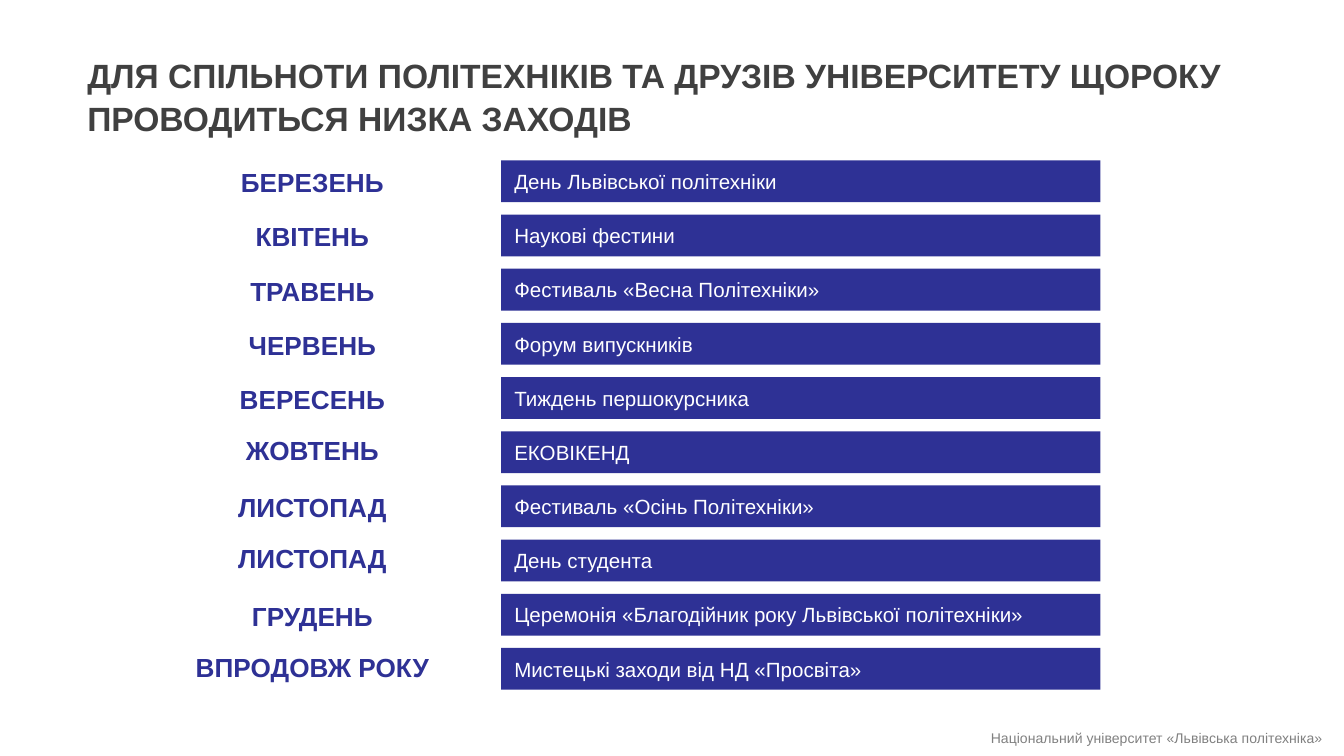
from pptx import Presentation
from pptx.dml.color import RGBColor
from pptx.enum.shapes import MSO_SHAPE
from pptx.enum.text import MSO_ANCHOR, MSO_AUTO_SIZE, PP_ALIGN
from pptx.util import Cm, Pt

RECTANGLE = MSO_SHAPE.RECTANGLE
TOP, MIDDLE = MSO_ANCHOR.TOP, MSO_ANCHOR.MIDDLE
LEFT, CENTER, RIGHT = PP_ALIGN.LEFT, PP_ALIGN.CENTER, PP_ALIGN.RIGHT
GROW = MSO_AUTO_SIZE.SHAPE_TO_FIT_TEXT

COLORS = {"blue": "2E3195", "white": "FFFFFF", "dark": "404040", "gray": "808080"}

presentation = Presentation()
presentation.slide_width = Cm(25.4)
presentation.slide_height = Cm(14.28)
slide = presentation.slides.add_slide(presentation.slide_layouts[6])


def write_text(text, shape, size, color, bold=False, align=LEFT, anchor=TOP,
               spacing=1.0, compact=True):
    frame = shape.text_frame
    frame.word_wrap = True
    frame.vertical_anchor = anchor
    if compact:
        frame.auto_size = GROW
        frame.margin_left = frame.margin_right = Cm(0.1)
        frame.margin_top = frame.margin_bottom = Cm(0.05)
    paragraph = frame.paragraphs[0]
    paragraph.alignment = align
    paragraph.line_spacing = spacing
    run = paragraph.add_run()
    run.text = text
    run.font.name = "Arial"
    run.font.size = Pt(size)
    run.font.bold = bold
    run.font.color.rgb = RGBColor.from_string(COLORS[color])
    return run


footer = slide.shapes.add_textbox(Cm(16.48), Cm(13.67), Cm(8.61), Cm(0.48))
footer_run = write_text("Національний університет «Львівська політехніка»", footer,
                        size=13, color="gray", align=RIGHT)
footer_run.font._element.set("baseline", "30000")

title = slide.shapes.add_textbox(Cm(1.55), Cm(0.94), Cm(23.57), Cm(1.63))
write_text("ДЛЯ СПІЛЬНОТИ ПОЛІТЕХНІКІВ ТА ДРУЗІВ УНІВЕРСИТЕТУ ЩОРОКУ "
           "ПРОВОДИТЬСЯ НИЗКА ЗАХОДІВ", title,
           size=18, color="dark", bold=True, spacing=1.07)

NORMAL, TIGHT = 1.07, 0.9
events = [
    ("БЕРЕЗЕНЬ", "День Львівської політехніки", NORMAL),
    ("КВІТЕНЬ", "Наукові фестини", NORMAL),
    ("ТРАВЕНЬ", "Фестиваль «Весна Політехніки»", NORMAL),
    ("ЧЕРВЕНЬ", "Форум випускників", NORMAL),
    ("ВЕРЕСЕНЬ", "Тиждень першокурсника", NORMAL),
    ("ЖОВТЕНЬ", "ЕКОВІКЕНД", TIGHT),
    ("ЛИСТОПАД", "Фестиваль «Осінь Політехніки»", NORMAL),
    ("ЛИСТОПАД", "День студента", TIGHT),
    ("ГРУДЕНЬ", "Церемонія «Благодійник року Львівської політехніки»", NORMAL),
    ("ВПРОДОВЖ РОКУ", "Мистецькі заходи від НД «Просвіта»", TIGHT),
]
first_top, last_top, bar_height = 3.03, 12.24, 0.79
row_step = (last_top - first_top) / (len(events) - 1)

for row, (month, event, spacing) in enumerate(events):
    top = first_top + row * row_step
    bar = slide.shapes.add_shape(RECTANGLE, Cm(9.47), Cm(top), Cm(11.33), Cm(bar_height))
    bar.shadow.inherit = False
    bar.fill.solid()
    bar.fill.fore_color.rgb = RGBColor.from_string(COLORS["blue"])
    bar.line.fill.background()
    write_text(event, bar, size=11, color="white", anchor=MIDDLE, compact=False)

    label_height = 0.69 if spacing == NORMAL else 0.64
    label_top = top + (bar_height - label_height) / 2
    label = slide.shapes.add_textbox(Cm(3.02), Cm(label_top), Cm(5.77), Cm(label_height))
    write_text(month, label, size=14, color="blue", bold=True, align=CENTER,
               anchor=MIDDLE, spacing=spacing)

presentation.save("out.pptx")
